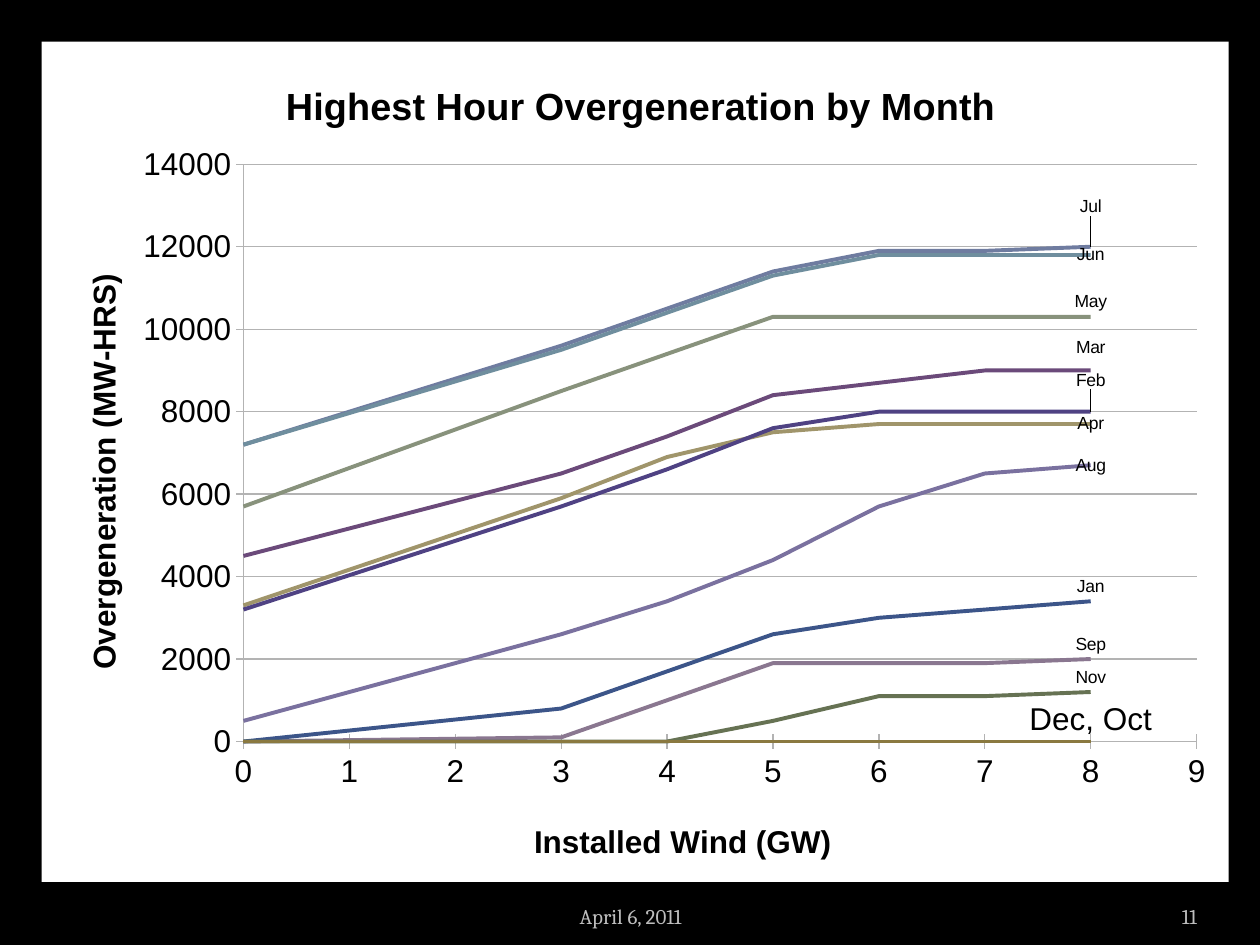
from lxml import etree
from pptx import Presentation
from pptx import util as u
from pptx.chart import data
from pptx.dml import color
from pptx.enum import chart as charts, text
from pptx.oxml import ns, parse_xml

BLACK = color.RGBColor(0x00, 0x00, 0x00)
FOOTER_GRAY = color.RGBColor(0xBD, 0xBD, 0xBD)
GRID_GRAY = color.RGBColor(0xB3, 0xB3, 0xB3)
OCHRE = color.RGBColor(0x8A, 0x79, 0x40)
MOSS = color.RGBColor(0x66, 0x72, 0x53)
TEAL = color.RGBColor(0x45, 0x72, 0x82)
BLUE = color.RGBColor(0x3C, 0x55, 0x89)
INDIGO = color.RGBColor(0x4F, 0x42, 0x83)
PLUM = color.RGBColor(0x6B, 0x4A, 0x7A)
SAND = color.RGBColor(0xA0, 0x95, 0x6B)
SAGE = color.RGBColor(0x88, 0x92, 0x7C)
STEEL = color.RGBColor(0x6F, 0x8E, 0x9E)
SLATE = color.RGBColor(0x6F, 0x7C, 0xA0)
LAVENDER = color.RGBColor(0x7A, 0x71, 0x9F)
MAUVE = color.RGBColor(0x8A, 0x77, 0x90)

ABOVE = charts.XL_LABEL_POSITION.ABOVE
CENTER = charts.XL_LABEL_POSITION.CENTER
WIND = [0, 3, 4, 5, 6, 7, 8]
MONTHS = [
    ("Series 1", OCHRE, None, 0, [0, 0, 0, 0, 0, 0, 0]),
    ("Nov", MOSS, ABOVE, 0, [0, 0, 0, 500, 1100, 1100, 1200]),
    ("Series 3", TEAL, ABOVE, 0, [0, 0, 0, 0, 0, 0, 0]),
    ("Jan", BLUE, ABOVE, 0, [0, 800, 1700, 2600, 3000, 3200, 3400]),
    ("Feb", INDIGO, ABOVE, -0.02, [3200, 5700, 6600, 7600, 8000, 8000, 8000]),
    ("Mar", PLUM, ABOVE, -0.01, [4500, 6500, 7400, 8400, 8700, 9000, 9000]),
    ("Apr", SAND, CENTER, 0, [3300, 5900, 6900, 7500, 7700, 7700, 7700]),
    ("May", SAGE, ABOVE, 0, [5700, 8500, 9400, 10300, 10300, 10300, 10300]),
    ("Jun", STEEL, CENTER, 0, [7200, 9500, 10400, 11300, 11800, 11800, 11800]),
    ("Jul", SLATE, ABOVE, -0.03, [7200, 9600, 10500, 11400, 11900, 11900, 12000]),
    ("Aug", LAVENDER, CENTER, 0, [500, 2600, 3400, 4400, 5700, 6500, 6700]),
    ("Sep", MAUVE, ABOVE, 0, [0, 100, 1000, 1900, 1900, 1900, 2000]),
]


def format_font(font, size, name="Arial", rgb=BLACK, bold=False):
    for key, value in {"size": u.Pt(size), "name": name, "bold": bold}.items():
        setattr(font, key, value)
    font.color.rgb = rgb


def place(element, index, **values):
    for old in element.findall(ns.qn("c:layout")):
        element.remove(old)
    layout = etree.Element(ns.qn("c:layout"))
    manual = etree.SubElement(layout, ns.qn("c:manualLayout"))
    for key, value in values.items():
        etree.SubElement(manual, ns.qn(f"c:{key}")).set("val", str(value))
    element.insert(index, layout)


presentation = Presentation()
presentation.slide_width = u.Cm(25.4)
presentation.slide_height = u.Cm(19.05)
slide = presentation.slides.add_slide(presentation.slide_layouts[6])
slide.background.fill.solid()
slide.background.fill.fore_color.rgb = BLACK

chart_data = data.XyChartData()
for name, line_color, position, shift, values in MONTHS:
    series_data = chart_data.add_series(name)
    for wind, value in zip(WIND, values):
        series_data.add_data_point(wind, value)
chart = slide.shapes.add_chart(
    charts.XL_CHART_TYPE.XY_SCATTER_LINES_NO_MARKERS,
    u.Cm(0.84), u.Cm(0.84), u.Cm(23.93), u.Cm(16.94), chart_data).chart
chart.has_legend = False
format_font(chart.font, 18)
chart_space = chart.element
chart_space.find(ns.qn("c:txPr")).addprevious(parse_xml(
    f'<c:spPr {ns.nsdecls("c", "a")}><a:solidFill><a:srgbClr val="FFFFFF"/>'
    '</a:solidFill><a:ln><a:noFill/></a:ln></c:spPr>'))
place(chart_space.xpath(".//c:plotArea")[0], 0, layoutTarget="inner",
      xMode="edge", yMode="edge", x=0.17, y=0.146, w=0.803, h=0.687)

horizontal, vertical = chart.category_axis, chart.value_axis
for owner, caption, size, x, y in [
    (chart, "Highest Hour Overgeneration by Month", 21.6, 0.2, 0.04),
    (horizontal, "Installed Wind (GW)", 18, 0.41, 0.92),
    (vertical, "Overgeneration (MW-HRS)", 18, 0.03, 0.27),
]:
    owner.has_title = True
    title = owner.chart_title if owner is chart else owner.axis_title
    title.text_frame.text = caption
    format_font(title.text_frame.paragraphs[0].runs[0].font, size, bold=True)
    if owner is vertical:
        title.text_frame._txBody.bodyPr.set("rot", "-5400000")
    place(title._element, 1, xMode="edge", yMode="edge", x=x, y=y)

for axis, maximum, step in [(horizontal, 9, 1), (vertical, 14000, 2000)]:
    for key, value in {
        "minimum_scale": 0, "maximum_scale": maximum, "major_unit": step,
        "has_major_gridlines": axis is vertical,
        "major_tick_mark": charts.XL_TICK_MARK.CROSS,
        "minor_tick_mark": charts.XL_TICK_MARK.NONE,
    }.items():
        setattr(axis, key, value)
    axis.tick_labels.number_format = "0"
    axis.tick_labels.number_format_is_linked = False
    format_font(axis.tick_labels.font, 18)
    axis.format.line.color.rgb = GRID_GRAY
vertical.major_gridlines.format.line.color.rgb = GRID_GRAY

chart.plots[0].vary_by_categories = False
for series, (name, line_color, position, shift, values) in zip(chart.plots[0].series, MONTHS):
    series.smooth = False
    series.format.line.color.rgb = line_color
    series.format.line.width = u.Pt(2.25)
    if position is None:
        continue
    label = series.points[len(WIND) - 1].data_label
    if name == "Series 3":
        label.text_frame.text = "Dec, Oct"
        format_font(label.text_frame.paragraphs[0].runs[0].font, 18)
    else:
        format_font(label.font, 10)
    label.position = position
    label_element = series._element.xpath(".//c:dLbl")[0]
    if name != "Series 3":
        label_element.find(ns.qn("c:showVal")).set("val", "0")
        label_element.find(ns.qn("c:showSerName")).set("val", "1")
    label_element.getparent().find(ns.qn("c:showVal")).set("val", "0")
    if shift:
        place(label_element, 1, x=0, y=shift)

for words, left, width, alignment, inset in [
    ("April 6, 2011", 8.69, 8.05, text.PP_ALIGN.CENTER, 0.25),
    ("11", 22.02, 2.11, text.PP_ALIGN.RIGHT, 0),
]:
    frame = slide.shapes.add_textbox(u.Cm(left), u.Cm(17.83), u.Cm(width), u.Cm(1.02)).text_frame
    for key, value in {
        "word_wrap": True, "vertical_anchor": text.MSO_ANCHOR.BOTTOM,
        "margin_left": u.Cm(inset), "margin_right": u.Cm(inset), "text": words,
    }.items():
        setattr(frame, key, value)
    paragraph = frame.paragraphs[0]
    paragraph.alignment = alignment
    format_font(paragraph.runs[0].font, 12, "Cambria", FOOTER_GRAY)

presentation.save("out.pptx")
